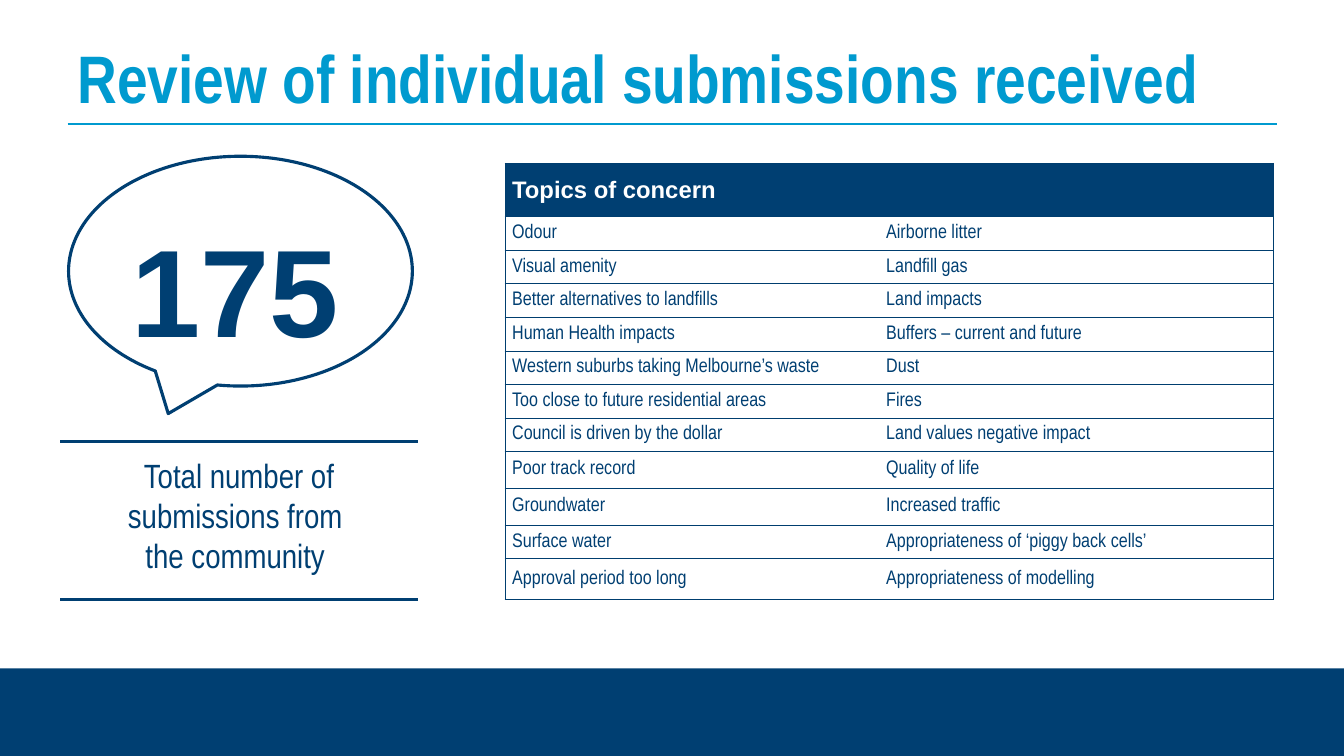
import pptx
import pptx.util
import pptx.dml.color
import pptx.enum.shapes
import pptx.enum.text
import pptx.oxml
import pptx.oxml.ns

Inches = pptx.util.Inches
Pt = pptx.util.Pt
RGBColor = pptx.dml.color.RGBColor
Shape = pptx.enum.shapes.MSO_SHAPE
Anchor = pptx.enum.text.MSO_ANCHOR
Align = pptx.enum.text.PP_ALIGN

NAVY = RGBColor(0x00, 0x3F, 0x72)
EDGE = RGBColor(0x00, 0x3E, 0x6F)
SKY = RGBColor(0x00, 0x9A, 0xCF)
WHITE = RGBColor(0xFF, 0xFF, 0xFF)
NARROW = "Arial Narrow"
WIDE = "Arial"

TOPICS = [
    ("Odour", "Airborne litter"),
    ("Visual amenity", "Landfill gas"),
    ("Better alternatives to landfills", "Land impacts"),
    ("Human Health impacts", "Buffers – current and future"),
    ("Western suburbs taking Melbourne’s waste", "Dust"),
    ("Too close to future residential areas", "Fires"),
    ("Council is driven by the dollar", "Land values negative impact"),
    ("Poor track record", "Quality of life"),
    ("Groundwater", "Increased traffic"),
    ("Surface water", "Appropriateness of ‘piggy back cells’"),
    ("Approval period too long", "Appropriateness of modelling"),
]
ROWS = [0.53] + [1 / 3] * 7 + [0.36, 0.37, 1 / 3, 0.4]
COLS = [3.71, 3.91]


class Board:
    """Holds the slide and its style."""

    def __init__(self, slide):
        self.slide = slide
        self.shapes = slide.shapes

    def run(self, para, text, size, color, font=NARROW, bold=False):
        run = para.add_run()
        run.text = text
        run.font.size = Pt(size)
        run.font.name = font
        run.font.bold = bold
        run.font.color.rgb = color

    def text(self, box, lines, size, color, font=NARROW, bold=False,
             align=Align.CENTER, anchor=Anchor.TOP, top=0.05):
        frame = self.shapes.add_textbox(*map(Inches, box)).text_frame
        frame.word_wrap = True
        frame.vertical_anchor = anchor
        frame.margin_top = Inches(top)
        para = frame.paragraphs[0]
        para.alignment = align
        for i, line in enumerate(lines):
            if i:
                para.add_line_break()
            self.run(para, line, size, color, font, bold)

    def shape(self, kind, box, fill=None, line=None, width=1):
        item = self.shapes.add_shape(kind, *map(Inches, box))
        item.shadow.inherit = False
        if fill is None:
            item.fill.background()
        else:
            item.fill.solid()
            item.fill.fore_color.rgb = fill
        if line is None:
            item.line.fill.background()
        else:
            item.line.color.rgb = line
            item.line.width = Pt(width)
        return item

    def rule(self, left, right, y, color, width):
        line = self.shapes.add_connector(
            pptx.enum.shapes.MSO_CONNECTOR.STRAIGHT,
            Inches(left), Inches(y), Inches(right), Inches(y))
        line.line.color.rgb = color
        line.line.width = Pt(width)
        props = line._element.spPr
        props.append(props.makeelement(pptx.oxml.ns.qn("a:effectLst"), {}))

    def border(self, cell, shown):
        props = cell._tc.get_or_add_tcPr()
        for side in "LRTB":
            fill = "<a:noFill/>"
            if side in shown:
                fill = f'<a:solidFill><a:srgbClr val="{EDGE}"/></a:solidFill>'
            props.append(pptx.oxml.parse_xml(
                f'<a:ln{side} {pptx.oxml.ns.nsdecls("a")} w="{Pt(0.75)}">'
                f'{fill}</a:ln{side}>'))

    def cell(self, cell, text, sides, size=14, color=NAVY, font=NARROW,
             fill=None, bold=False):
        self.border(cell, sides)
        if fill is None:
            cell.fill.background()
        else:
            cell.fill.solid()
            cell.fill.fore_color.rgb = fill
        cell.vertical_anchor = Anchor.MIDDLE
        cell.margin_left = cell.margin_right = Inches(0.07)
        cell.margin_top = cell.margin_bottom = 0
        if text:
            para = cell.text_frame.paragraphs[0]
            self.run(para, text, size, color, font, bold)

    def table(self, left, top, head, body):
        grid = self.shapes.add_table(
            len(ROWS), len(COLS), Inches(left), Inches(top),
            Inches(sum(COLS)), Inches(sum(ROWS))).table
        for col, width in zip(grid.columns, COLS):
            col.width = Inches(width)
        for row, height in zip(grid.rows, ROWS):
            row.height = Inches(height)
        # Header across both columns
        grid.cell(0, 0).merge(grid.cell(0, 1))
        for c, label in enumerate((head, "")):
            self.cell(grid.cell(0, c), label, "LRTB", 17, WHITE, WIDE,
                      NAVY, True)
        # Topics, with no line between the columns
        for r, pair in enumerate(body, 1):
            for c, topic in enumerate(pair):
                self.cell(grid.cell(r, c), topic, "LTB" if c == 0 else "RTB")


def main():
    deck = pptx.Presentation()
    deck.slide_width = Inches(13.33)
    deck.slide_height = Inches(7.5)
    board = Board(deck.slides.add_slide(deck.slide_layouts[6]))

    # Footer band and title
    board.shape(Shape.RECTANGLE, (0, 6.63, 13.33, 0.87), fill=NAVY)
    board.rule(0.67, 12.67, 1.23, SKY, 1.5)
    board.text((0.67, 0.3, 12, 0.93),
               ["Review of individual submissions received"], 48, SKY,
               bold=True, align=Align.LEFT, anchor=Anchor.MIDDLE)

    # Speech bubble with the count
    bubble = board.shape(Shape.OVAL_CALLOUT, (0.68, 1.55, 3.41, 2.28),
                         line=NAVY, width=2.25)
    bubble.adjustments[0] = -0.21
    bubble.adjustments[1] = 0.62
    board.text((1.15, 1.94, 2.36, 1.57), ["175"], 88.8, NAVY, WIDE, True,
               top=0.17)

    # Caption between two rules
    for y in (4.38, 5.95):
        board.rule(0.6, 4.15, y, NAVY, 2)
    board.text((0.6, 4.46, 3.54, 1.73),
               ["Total number of submissions from ", "the community "],
               24, NAVY)

    # Topics table
    board.table(5.01, 1.62, "Topics of concern", TOPICS)

    deck.save("out.pptx")


if __name__ == "__main__":
    main()
